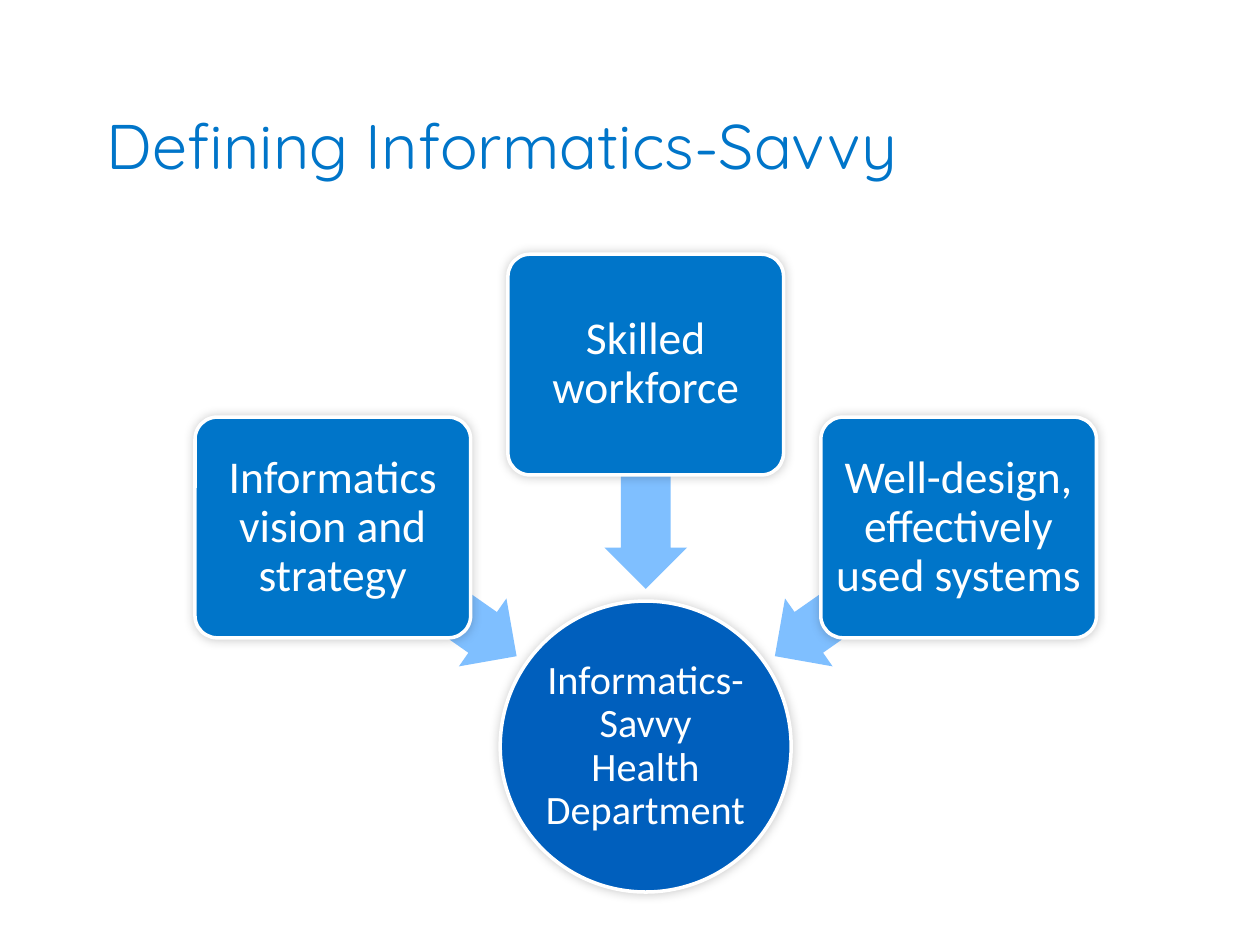
from math import cos, radians, sin

from lxml.etree import SubElement
from pptx import Presentation
from pptx.dml.color import RGBColor
from pptx.enum.shapes import MSO_SHAPE as SHAPE
from pptx.enum.text import MSO_ANCHOR as ANCHOR, PP_ALIGN as ALIGN
from pptx.oxml.ns import qn
from pptx.util import Inches, Pt

BLUE = RGBColor(0x00, 0x75, 0xC9)
DEEP = RGBColor(0x00, 0x5F, 0xBD)
PALE = RGBColor(0x7F, 0xBF, 0xFF)
WHITE = RGBColor(0xFF, 0xFF, 0xFF)

W, H = Inches(10), Inches(7.5)
PILLARS = [
    (215, "Informatics vision and strategy"),
    (270, "Skilled workforce"),
    (325, "Well-design, effectively used systems"),
]


def write(tf, text, size, font="Calibri", color=WHITE, align=ALIGN.CENTER,
          anchor=ANCHOR.MIDDLE, spacing=0.9, inset=None):
    tf.word_wrap = True
    tf.vertical_anchor = anchor
    if inset is not None:
        tf.margin_left = tf.margin_right = inset
        tf.margin_top = tf.margin_bottom = inset
    p = tf.paragraphs[0]
    p.alignment = align
    p.line_spacing = spacing
    r = p.add_run()
    r.text = text
    r.font.name = font
    r.font.size = Pt(size)
    r.font.color.rgb = color


def add_shadow(sp):
    effects = sp._element.spPr.find(qn("a:effectLst"))
    shadow = SubElement(effects, qn("a:outerShdw"), blurRad=str(Pt(6)),
                        dist="0", dir=str(315 * 60000), rotWithShape="0")
    color = SubElement(shadow, qn("a:srgbClr"), val="000000")
    SubElement(color, qn("a:alpha"), val="20000")


def add_centred(s, kind, cx, cy, w, h, fill, outlined=True):
    sp = s.shapes.add_shape(kind, int(cx - w / 2), int(cy - h / 2), int(w), int(h))
    sp.shadow.inherit = False
    sp.fill.solid()
    sp.fill.fore_color.rgb = fill
    if outlined:
        sp.line.color.rgb = WHITE
        sp.line.width = Pt(2)
        add_shadow(sp)
    else:
        sp.line.fill.background()
    return sp


def add_title(s, x, y, w, h, text):
    tf = s.shapes.add_textbox(int(x), int(y), int(w), int(h)).text_frame
    write(tf, text, 36, font="Quicksand", color=BLUE, align=ALIGN.LEFT,
          anchor=ANCHOR.BOTTOM, spacing=Pt(38))


def add_converging(s, x, y, w, h, hub_text, pillars):
    d = 0.323 * w
    cx, cy = x + w / 2, y + h - d / 2
    hub = add_centred(s, SHAPE.OVAL, cx, cy, d, d, DEEP)
    write(hub.text_frame, hub_text, 23, inset=Inches(0.02))

    for angle, text in pillars:
        dx, dy = cos(radians(angle)), sin(radians(angle))
        near, far = 0.299 * w, 0.424 * w
        arrow = add_centred(s, SHAPE.LEFT_ARROW, cx + near * dx, cy + near * dy,
                            0.248 * w, 0.092 * w, PALE, outlined=False)
        arrow.adjustments[0] = 0.6
        arrow.rotation = angle
        card = add_centred(s, SHAPE.ROUNDED_RECTANGLE, cx + far * dx, cy + far * dy,
                           0.306 * w, 0.245 * w, BLUE)
        card.adjustments[0] = 0.1
        write(card.text_frame, text, 26, inset=Inches(0.05))


def main():
    prs = Presentation()
    prs.slide_width, prs.slide_height = W, H
    s = prs.slides.add_slide(prs.slide_layouts[6])
    add_title(s, 0.075 * W, 0.052 * H, 0.875 * W, 0.147 * H,
              "Defining Informatics-Savvy")
    add_converging(s, 0.155 * W, 0.27 * H, 0.715 * W, 0.674 * H,
                   "Informatics-Savvy Health Department", PILLARS)
    prs.save("out.pptx")


if __name__ == "__main__":
    main()
